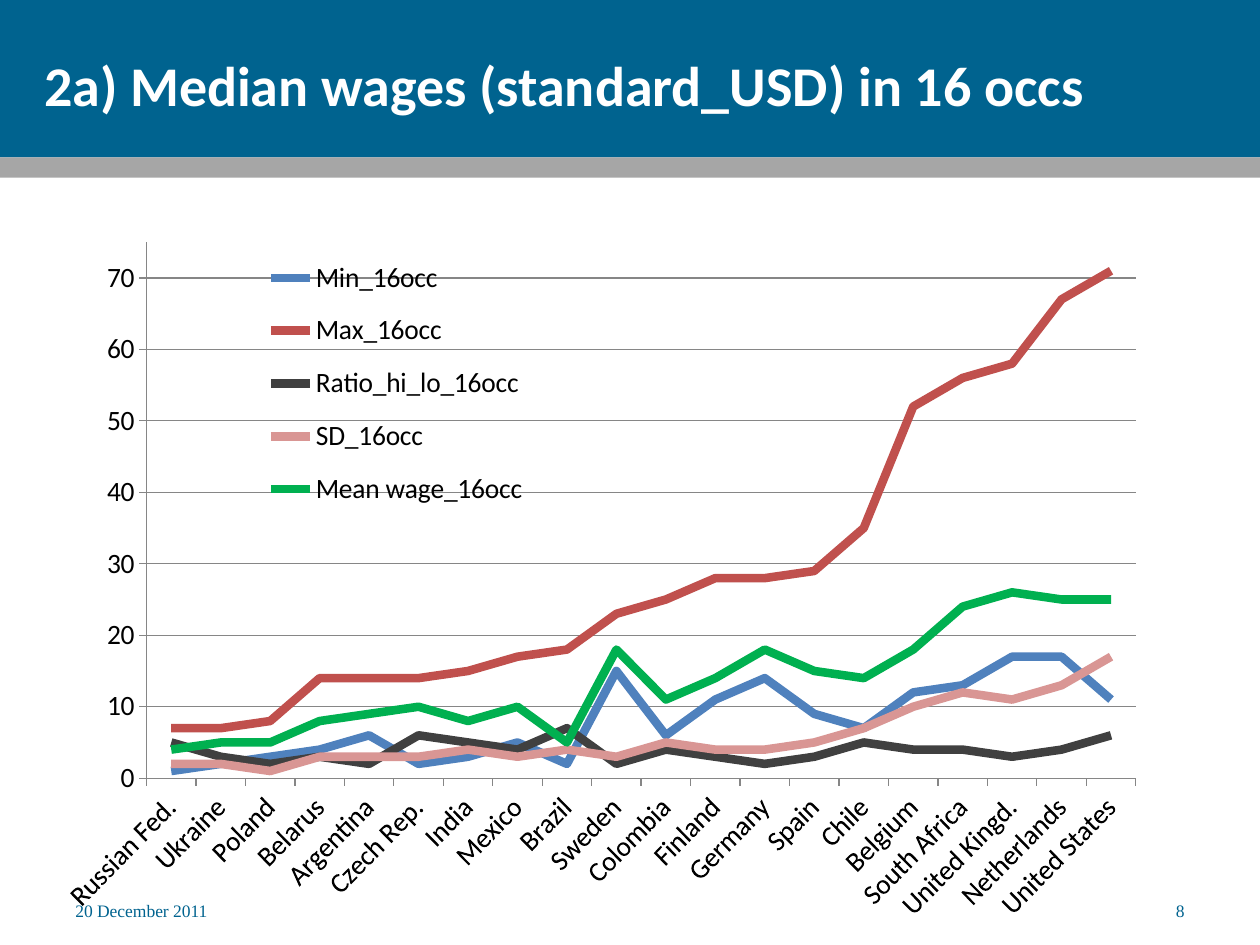
from lxml.etree import SubElement
from pptx import Presentation
from pptx.chart.data import CategoryChartData as Data
from pptx.dml.color import RGBColor
from pptx.enum.chart import XL_CHART_TYPE as Kind, XL_LEGEND_POSITION as Side
from pptx.enum.chart import XL_TICK_MARK as Tick
from pptx.enum.shapes import MSO_SHAPE as Shape
from pptx.enum.text import MSO_ANCHOR as Anchor, MSO_AUTO_SIZE as Fit, PP_ALIGN as Align
from pptx.oxml.ns import qn
from pptx.util import Pt

BLUE, GREY, WHITE, BLACK, RULE = "00638F", "A6A6A6", "FFFFFF", "000000", "868686"

LANDS = ["Russian Fed.", "Ukraine", "Poland", "Belarus", "Argentina",
         "Czech Rep.", "India", "Mexico", "Brazil", "Sweden", "Colombia",
         "Finland", "Germany", "Spain", "Chile", "Belgium", "South Africa",
         "United Kingd.", "Netherlands", "United States"]
WAGES = [
    ("Min_16occ", "4F81BD",
     [1, 2, 3, 4, 6, 2, 3, 5, 2, 15, 6, 11, 14, 9, 7, 12, 13, 17, 17, 11]),
    ("Max_16occ", "C0504D",
     [7, 7, 8, 14, 14, 14, 15, 17, 18, 23, 25, 28, 28, 29, 35, 52, 56, 58, 67, 71]),
    ("Ratio_hi_lo_16occ", "404040",
     [5, 3, 2, 3, 2, 6, 5, 4, 7, 2, 4, 3, 2, 3, 5, 4, 4, 3, 4, 6]),
    ("SD_16occ", "D99694",
     [2, 2, 1, 3, 3, 3, 4, 3, 4, 3, 5, 4, 4, 5, 7, 10, 12, 11, 13, 17]),
    ("Mean wage_16occ", "00B050",
     [4, 5, 5, 8, 9, 10, 8, 10, 5, 18, 11, 14, 18, 15, 14, 18, 24, 26, 25, 25]),
]


def tint(hue):
    return RGBColor.from_string(hue)


def add_band(slide, top, height, hue):
    band = slide.shapes.add_shape(Shape.RECTANGLE, 0, Pt(top), Pt(720), Pt(height))
    band.shadow.inherit = False
    band.fill.solid()
    band.fill.fore_color.rgb = tint(hue)
    band.line.fill.background()


def set_text(box, text, face, size, hue, bold=False, align=Align.LEFT):
    frame = box.text_frame
    frame.text = text
    frame.word_wrap = True
    frame.auto_size = Fit.NONE
    frame.vertical_anchor = Anchor.MIDDLE
    para = frame.paragraphs[0]
    para.alignment = align
    font = para.runs[0].font
    font.name, font.size, font.bold = face, Pt(size), bold
    font.color.rgb = tint(hue)


def add_title(slide, text):
    title = slide.shapes.title
    title.left, title.top = Pt(18), Pt(11.5)
    title.width, title.height = Pt(702), Pt(73.5)
    set_text(title, text, "Calibri", 32, WHITE, bold=True)
    slide.shapes._spTree.append(title._element)  # in front of the bands


def add_foot(slide, left, text, align):
    box = slide.shapes.add_textbox(Pt(left), Pt(512), Pt(168), Pt(17))
    set_text(box, text, "Times New Roman", 10, BLUE, align=align)


def set_place(part, index, inner=False, **spots):
    """Fix a chart part at x, y, w, h, each a share of the chart."""
    for old in part.findall(qn("c:layout")):
        part.remove(old)
    layout = SubElement(part, qn("c:layout"))
    part.insert(index, layout)
    manual = SubElement(layout, qn("c:manualLayout"))
    if inner:
        SubElement(manual, qn("c:layoutTarget")).set("val", "inner")
    for key in "xy":
        SubElement(manual, qn(f"c:{key}Mode")).set("val", "edge")
    for key, share in spots.items():
        SubElement(manual, qn(f"c:{key}")).set("val", str(share))


def set_axis(axis):
    axis.major_tick_mark = Tick.OUTSIDE
    axis.minor_tick_mark = Tick.NONE
    axis.format.line.color.rgb = tint(RULE)
    axis.tick_labels.font.size = Pt(16)


def add_chart(slide):
    data = Data(number_format="0")
    data.categories = LANDS
    for name, _, wages in WAGES:
        data.add_series(name, wages)
    chart = slide.shapes.add_chart(
        Kind.LINE, Pt(36), Pt(126), Pt(648), Pt(414), data).chart
    chart.has_title = False
    chart.font.name, chart.font.size = "Calibri", Pt(16)
    chart.font.color.rgb = tint(BLACK)

    lands, scale = chart.category_axis, chart.value_axis
    set_axis(lands)
    set_axis(scale)
    lands._element.txPr.bodyPr.set("rot", "-2700000")
    scale.minimum_scale, scale.maximum_scale, scale.major_unit = 0, 75, 10
    scale.has_major_gridlines = True
    scale.major_gridlines.format.line.color.rgb = tint(RULE)

    for series, (_, hue, _) in zip(chart.plots[0].series, WAGES):
        series.smooth = False
        series.format.line.color.rgb = tint(hue)
        series.format.line.width = Pt(5)

    chart.has_legend = True
    legend = chart.legend
    legend.position = Side.RIGHT
    legend.include_in_layout = True
    legend.font.size = Pt(16)
    set_place(legend._element, 1, x=0.13, y=0.03, w=0.3, h=0.39)
    area = chart._chartSpace.chart.plotArea
    set_place(area, 0, inner=True, x=0.055, y=0.03, w=0.89, h=0.74)


def main():
    deck = Presentation()
    deck.slide_width, deck.slide_height = Pt(720), Pt(540)
    slide = deck.slides.add_slide(deck.slide_layouts[5])
    add_band(slide, 0, 90, BLUE)
    add_band(slide, 90, 11.5, GREY)
    add_title(slide, "2a) Median wages (standard_USD) in 16 occs")
    add_foot(slide, 36, "20 December 2011", Align.LEFT)
    add_foot(slide, 516, "8", Align.RIGHT)
    add_chart(slide)
    deck.save("out.pptx")


if __name__ == "__main__":
    main()
